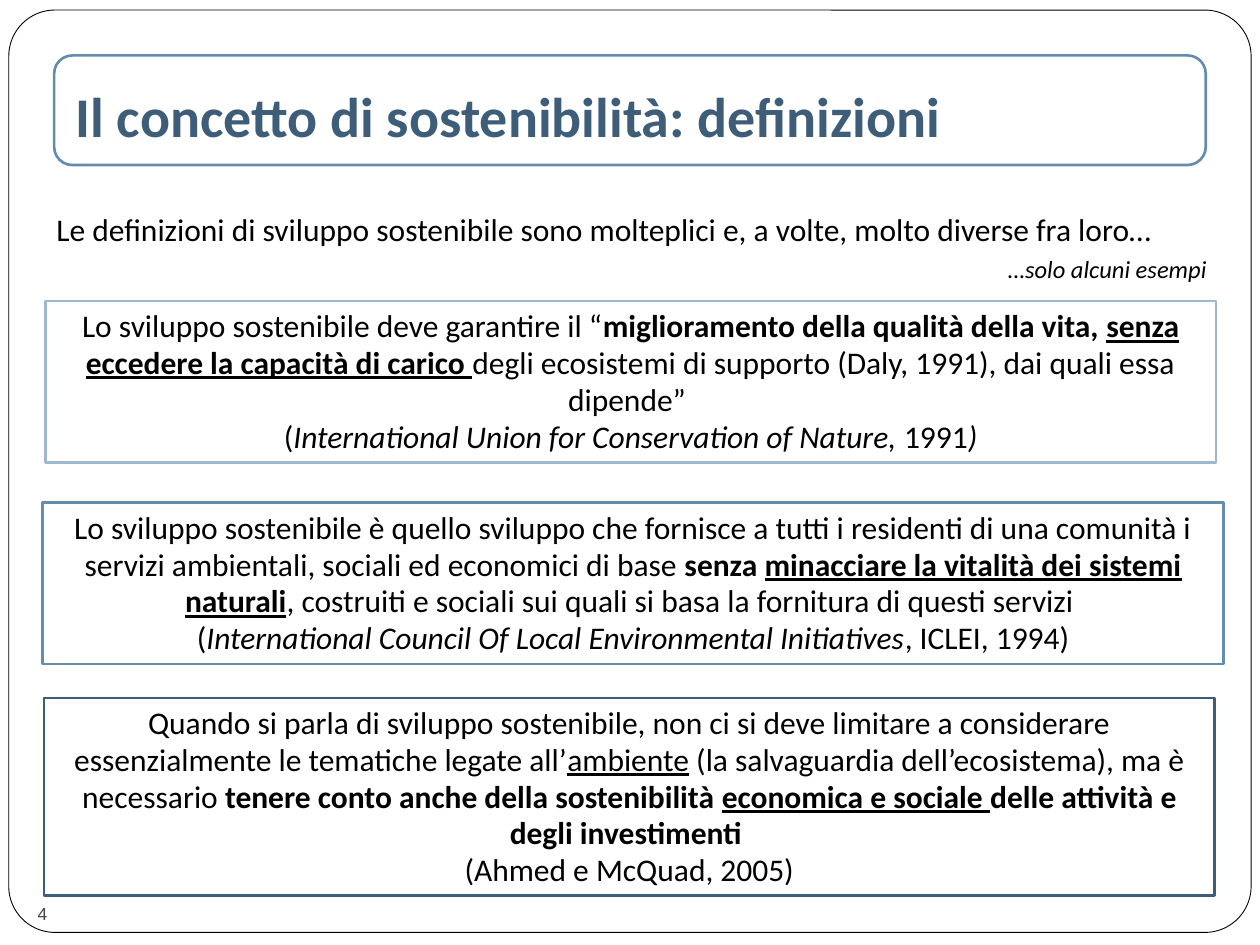
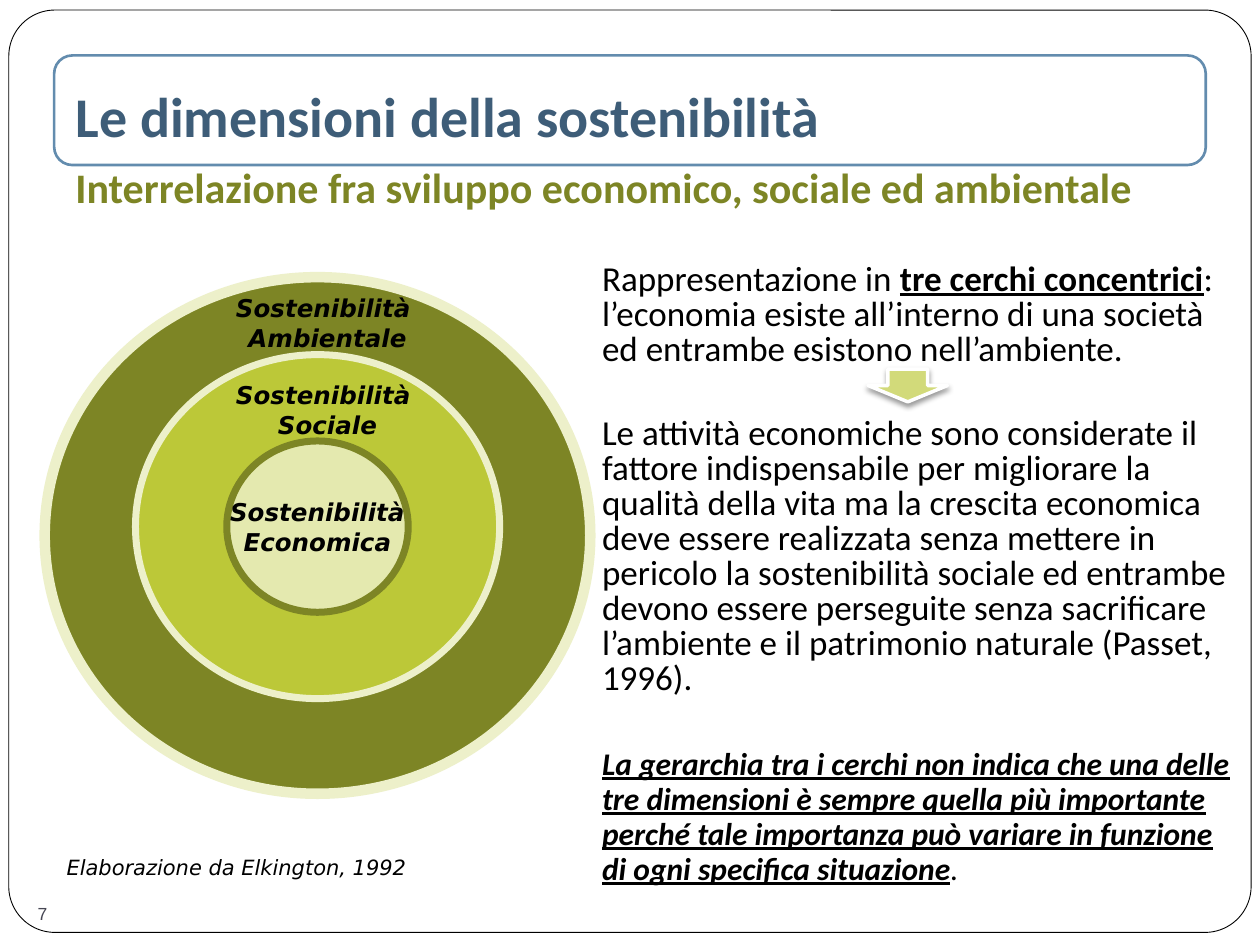
from lxml.etree import SubElement
from pptx import Presentation
from pptx.dml.color import RGBColor
from pptx.enum.shapes import MSO_SHAPE
from pptx.enum.text import MSO_ANCHOR, MSO_AUTO_SIZE, PP_ALIGN
from pptx.oxml.ns import qn
from pptx.util import Inches, Pt

WHITE = RGBColor(0xFF, 0xFF, 0xFF)
BLACK = RGBColor(0, 0, 0)
GREY = RGBColor(0x46, 0x46, 0x53)
PALE = RGBColor(0x9F, 0xB8, 0xCD)
BLUE = RGBColor(0x63, 0x8C, 0xAE)
NAVY = RGBColor(0x3E, 0x5D, 0x78)
OLIVE = RGBColor(0x7D, 0x85, 0x25)
LIME = RGBColor(0xBC, 0xC8, 0x38)
MIST = RGBColor(0xE4, 0xE9, 0xAF)
CREAM = RGBColor(0xED, 0xF0, 0xCA)
LEAF = RGBColor(0xD2, 0xDA, 0x7A)

MAIN, SIDE, SMALL = "Calibri", "DejaVu Sans", "Arial"
LEFT, MID, RIGHT, JUST = (PP_ALIGN.LEFT, PP_ALIGN.CENTER,
                          PP_ALIGN.RIGHT, PP_ALIGN.JUSTIFY)

# A paragraph is a list of runs: (text, style), style letters b, i, u.
INTRO = ("Le definizioni di sviluppo sostenibile sono molteplici e, a volte, "
         "molto diverse fra loro…")
ASIDE = "…solo alcuni esempi "

# Definitions: place, line colour, paragraphs
QUOTES = [
    ((0.36, 2.39, 9.29, 1.28), PALE, [
        [("Lo sviluppo sostenibile deve garantire il “", ""),
         ("miglioramento della qualità della vita, ", "b"),
         ("senza eccedere la capacità di carico", "bu"),
         (" ", "u"),
         ("degli ecosistemi di supporto (Daly, 1991), dai quali essa "
          "dipende” ", "")],
        [("(", ""),
         ("International Union for Conservation of Nature, ", "i"),
         ("1991", ""), (")", "i")]]),
    ((0.34, 3.99, 9.37, 1.28), BLUE, [
        [("Lo sviluppo sostenibile è quello sviluppo che fornisce a tutti i "
          "residenti di una comunità i servizi ambientali, sociali ed "
          "economici di base ", ""),
         ("senza ", "b"),
         ("minacciare la vitalità dei sistemi naturali", "bu"),
         (", costruiti e sociali sui quali si basa la fornitura di questi "
          "servizi ", "")],
        [("(", ""),
         ("International Council Of Local Environmental Initiatives", "i"),
         (", ICLEI, 1994)", "")]]),
    ((0.35, 5.54, 9.29, 1.57), NAVY, [
        [("Quando si parla di sviluppo sostenibile, non ci si deve limitare a "
          "considerare essenzialmente le tematiche legate all’", ""),
         ("ambiente", "u"),
         (" (la salvaguardia dell’ecosistema), ma è necessario ", ""),
         ("tenere conto anche della sostenibilità ", "b"),
         ("economica e sociale ", "bu"),
         ("delle attività e degli investimenti ", "b")],
        [("(Ahmed e McQuad, 2005)", "")]]),
]

HEAD = "Interrelazione fra sviluppo economico, sociale ed ambientale"
CREDIT = "Elaborazione da Elkington, 1992"

# Rings: width, height, middle y, fill, line colour, line width
RING_X = 2.52
RINGS = [
    (4.33, 4.10, 4.25, OLIVE, CREAM, 6),
    (2.89, 2.73, 4.18, LIME, CREAM, 4),
    (1.44, 1.36, 4.18, MIST, OLIVE, 4),
]
LABELS = [("Ambientale", 2.28), ("Sociale", 2.97)]
CORE = "Economica"

# Body: size, paragraph
BODY = [
    (20, [("Rappresentazione in ", ""), ("tre cerchi concentrici", "bu"),
          (": l’economia esiste all’interno di una società ed entrambe "
           "esistono nell’ambiente.", "")]),
    (20, [("Le attività economiche sono considerate il fattore indispensabile "
           "per migliorare la qualità della vita ma la crescita economica deve "
           "essere realizzata senza mettere in pericolo la sostenibilità "
           "sociale ed entrambe devono essere perseguite senza sacrificare "
           "l’ambiente e il patrimonio naturale (Passet, 1996).", "")]),
    (18, [("La gerarchia tra i cerchi non indica che una delle tre dimensioni "
           "è sempre quella più importante perché tale importanza può variare "
           "in funzione di ogni specifica situazione", "biu"), (".", "i")]),
]


def inches(box):
    return [Inches(n) for n in box]


def shape(slide, kind, box, fill=None, line=None, width=1.5):
    item = slide.shapes.add_shape(kind, *inches(box))
    item.shadow.inherit = False
    if fill is None:
        item.fill.background()
    else:
        item.fill.solid()
        item.fill.fore_color.rgb = fill
    if line is None:
        item.line.fill.background()
    else:
        item.line.color.rgb = line
        item.line.width = Pt(width)
    return item


def style(run, size, font, color, marks):
    run.font.size = Pt(size)
    run.font.name = font
    run.font.color.rgb = color
    run.font.bold = "b" in marks
    run.font.italic = "i" in marks
    run.font.underline = "u" in marks


def write(item, paras, size=18, font=MAIN, color=BLACK, align=LEFT,
          pitch=None, anchor=MSO_ANCHOR.TOP, wrap=True):
    """Fill a shape with paragraphs of (text, marks) runs; pitch is the line spacing."""
    frame = item.text_frame
    frame.word_wrap = wrap
    frame.auto_size = MSO_AUTO_SIZE.NONE
    frame.vertical_anchor = anchor
    for i, runs in enumerate(paras):
        para = frame.add_paragraph() if i else frame.paragraphs[0]
        para.alignment = align
        if pitch:
            para.line_spacing = Pt(pitch)
        for text, marks in runs:
            run = para.add_run()
            run.text = text
            style(run, size, font, color, marks)
    return frame.paragraphs


def label(slide, box, paras, **look):
    return write(slide.shapes.add_textbox(*inches(box)), paras, **look)


def page(deck, name, number):
    """Add a slide with the outer frame, title band, title and page number."""
    slide = deck.slides.add_slide(deck.slide_layouts[5])
    title = slide.shapes.title
    rim = shape(slide, MSO_SHAPE.ROUNDED_RECTANGLE, (0.07, 0.08, 9.86, 7.32),
                WHITE, BLACK, 0.5)
    rim.adjustments[0] = 0.05
    band = shape(slide, MSO_SHAPE.ROUNDED_RECTANGLE, (0.43, 0.44, 9.14, 0.87),
                 line=BLUE)
    for back in (rim, band):
        title.element.addprevious(back.element)
    title.left, title.top, title.width, title.height = inches(
        (0.5, 0.31, 9.5, 0.92))
    write(title, [[(name, "b")]], 32, color=NAVY, anchor=MSO_ANCHOR.BOTTOM)
    label(slide, (0.2, 6.98, 1.33, 0.4), [[(number, "")]], size=10,
          font=SMALL, color=GREY, anchor=MSO_ANCHOR.BOTTOM)
    return slide


def drop(item):
    """Give a shape a soft shadow straight below it."""
    fx = item.element.spPr.find(qn("a:effectLst"))
    cast = SubElement(fx, qn("a:outerShdw"), blurRad=str(Pt(3)),
                      dist=str(Pt(2)), dir="5400000", rotWithShape="0")
    tint = SubElement(cast, qn("a:srgbClr"), val=str(BLACK))
    SubElement(tint, qn("a:alpha"), val="40000")


def quotes(deck):
    slide = page(deck, "Il concetto di sostenibilità: definizioni", "4")
    intro = shape(slide, MSO_SHAPE.RECTANGLE, (0.35, 1.56, 9.37, 0.75), WHITE)
    aside = write(intro, [[(INTRO, "")], [(ASIDE, "i")]], pitch=26)[1]
    aside.alignment = RIGHT
    aside.line_spacing = Pt(20)
    aside.runs[0].font.size = Pt(14)
    for box, line, paras in QUOTES:
        card = shape(slide, MSO_SHAPE.RECTANGLE, box, WHITE, line)
        write(card, paras, align=MID, pitch=21)


def circles(deck):
    slide = page(deck, "Le dimensioni della sostenibilità", "7")
    label(slide, (0.5, 1.23, 9.23, 0.5), [[(HEAD, "b")]], size=24, color=OLIVE)

    look = dict(size=14, font=SIDE, align=MID, wrap=False)
    for wide, high, mid, fill, line, width in RINGS:
        box = (RING_X - wide / 2, mid - high / 2, wide, high)
        ring = shape(slide, MSO_SHAPE.OVAL, box, fill, line, width)
    write(ring, [[("Sostenibilità", "bi")], [(CORE, "bi")]],
          anchor=MSO_ANCHOR.MIDDLE, **look)
    for word, top in LABELS:
        label(slide, (1.78, top, 1.64, 0.52),
              [[("Sostenibilità ", "bi")], [(word, "bi")]], **look)
    label(slide, (0.43, 6.73, 4.49, 0.3), [[(CREDIT, "i")]], size=12,
          font=SIDE, align=JUST)

    paras = label(slide, (4.68, 2.04, 5.2, 5.09), [runs for _, runs in BODY],
                  pitch=20)
    for i, (para, (size, _)) in enumerate(zip(paras, BODY)):
        para.space_before = Pt(24 if i else 0)
        para.space_after = Pt(4)
        for run in para.runs:
            run.font.size = Pt(size)
    drop(shape(slide, MSO_SHAPE.DOWN_ARROW, (6.89, 2.93, 0.63, 0.26),
               LEAF, WHITE, 2))


def main():
    deck = Presentation()
    deck.slide_width, deck.slide_height = inches((10, 7.5))
    quotes(deck)
    circles(deck)
    deck.save("out.pptx")


if __name__ == "__main__":
    main()
